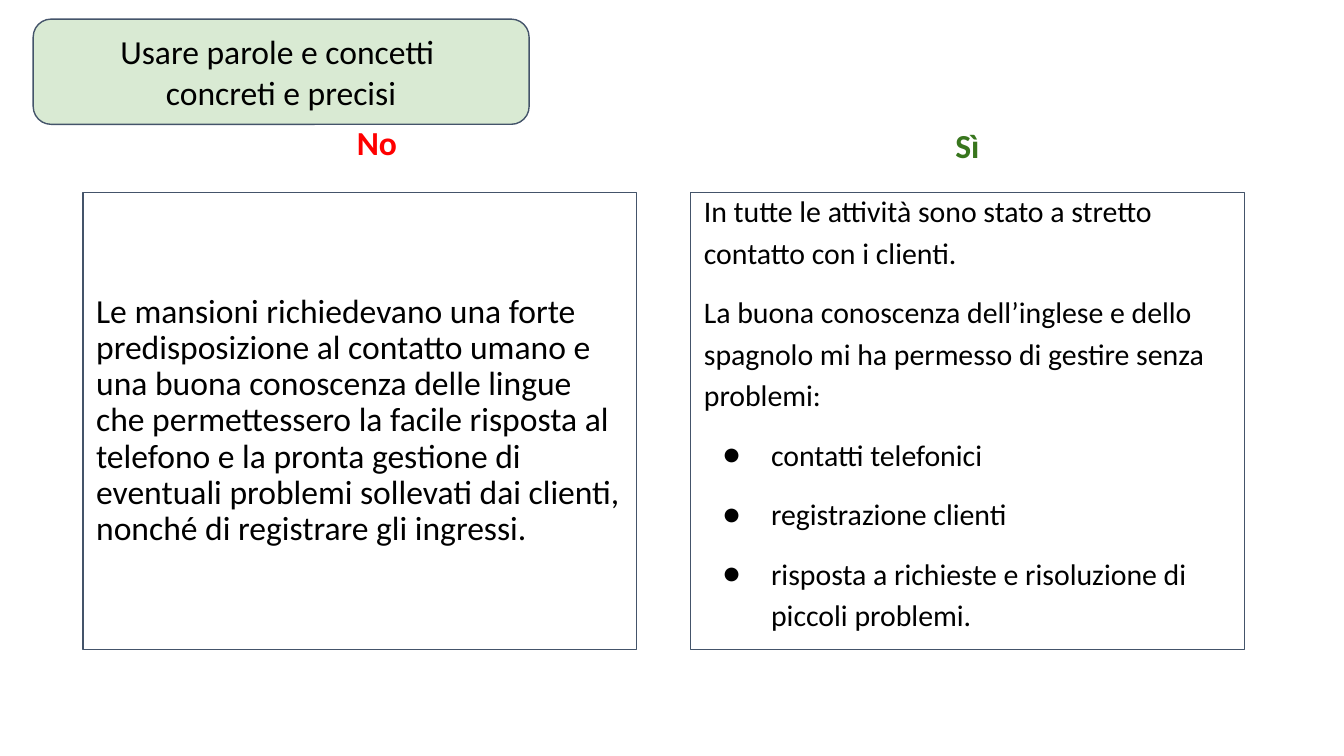
import pptx
import pptx.dml.color
import pptx.enum.shapes
import pptx.enum.text
import pptx.oxml
import pptx.oxml.ns
import pptx.util

RGBColor = pptx.dml.color.RGBColor
Align = pptx.enum.text.PP_ALIGN
Anchor = pptx.enum.text.MSO_ANCHOR
Shape = pptx.enum.shapes.MSO_SHAPE

BLACK = RGBColor(0x00, 0x00, 0x00)
RED = RGBColor(0xFF, 0x00, 0x00)
GREEN = RGBColor(0x38, 0x76, 0x1D)
PALE_GREEN = RGBColor(0xD9, 0xEA, 0xD3)
SLATE = RGBColor(0x44, 0x54, 0x6A)

FONT = "Calibri"
COLUMNS, ROWS = 100, 56.25
CELL = pptx.util.Inches(0.1)

PANEL_TOP, PANEL_WIDTH, PANEL_HEIGHT = 14.33, 41.2, 34
PANEL_LEFT, PANEL_STEP = 6.17, 45.22


def grid(box):
    return [round(length * CELL) for length in box]


def prepare_frame(shape, anchor, inset=0.1, top=None, bottom=None):
    frame = shape.text_frame
    frame.word_wrap = True
    frame.vertical_anchor = anchor
    frame.margin_left = frame.margin_right = pptx.util.Inches(inset)
    frame.margin_top = pptx.util.Inches(inset if top is None else top)
    frame.margin_bottom = pptx.util.Inches(inset if bottom is None else bottom)
    return frame


def add_bullet(paragraph, size):
    properties = paragraph._p.get_or_add_pPr()
    properties.set("marL", str(pptx.util.Inches(0.5)))
    properties.set("indent", str(pptx.util.Inches(-0.36)))
    namespace = pptx.oxml.ns.nsdecls("a")
    for markup in (
        f'<a:buClr {namespace}><a:srgbClr val="{BLACK}"/></a:buClr>',
        f'<a:buSzPts {namespace} val="{size * 100}"/>',
        f'<a:buFont {namespace} typeface="{FONT}"/>',
        f'<a:buChar {namespace} char="●"/>',
    ):
        properties.append(pptx.oxml.parse_xml(markup))


def write(frame, text, size=18, color=BLACK, bold=False, align=Align.LEFT,
          spacing=1.0, after=0, bullet=False):
    first = frame.paragraphs[0]
    paragraph = frame.add_paragraph() if first.runs else first
    paragraph.alignment = align
    paragraph.line_spacing = spacing
    paragraph.space_after = pptx.util.Pt(after)
    if bullet:
        add_bullet(paragraph, size)
    run = paragraph.add_run()
    run.text = text
    run.font.name = FONT
    run.font.size = pptx.util.Pt(size)
    run.font.bold = bold
    run.font.color.rgb = color


def add_outlined_shape(slide, kind, box, fill=None):
    shape = slide.shapes.add_shape(kind, *grid(box))
    shape.shadow.inherit = False
    shape.line.color.rgb = SLATE
    shape.line.width = pptx.util.Pt(0.75)
    if fill is None:
        shape.fill.background()
    else:
        shape.fill.solid()
        shape.fill.fore_color.rgb = fill
    return shape


def add_heading(slide, box, text, color, anchor):
    heading = slide.shapes.add_textbox(*grid(box))
    frame = prepare_frame(heading, anchor, inset=0.07)
    write(frame, text, color=color, bold=True, align=Align.CENTER, spacing=0.9)


def add_wrong_panel(slide, box):
    panel = add_outlined_shape(slide, Shape.RECTANGLE, box)
    frame = prepare_frame(panel, Anchor.MIDDLE)
    write(
        frame,
        "Le mansioni richiedevano una forte predisposizione al contatto umano e "
        "una buona conoscenza delle lingue che permettessero la facile risposta al "
        "telefono e la pronta gestione di eventuali problemi sollevati dai clienti, "
        "nonché di registrare gli ingressi. ",
        spacing=0.9,
    )


def add_right_panel(slide, box):
    panel = add_outlined_shape(slide, Shape.RECTANGLE, box)
    frame = prepare_frame(panel, Anchor.MIDDLE, top=0, bottom=0.16)
    for text, bullet in (
        ("In tutte le attività sono stato a stretto contatto con i clienti.", False),
        ("La buona conoscenza dell’inglese e dello spagnolo mi ha permesso di "
         "gestire senza problemi:", False),
        ("contatti telefonici", True),
        ("registrazione clienti", True),
        ("risposta a richieste e risoluzione di piccoli problemi.", True),
    ):
        write(frame, text, size=16, spacing=1.15, after=10, bullet=bullet)


def add_title(slide, box):
    title = add_outlined_shape(slide, Shape.ROUNDED_RECTANGLE, box, PALE_GREEN)
    title.adjustments[0] = 0.17
    frame = prepare_frame(title, Anchor.MIDDLE)
    for text in ("Usare parole e concetti ", "concreti e precisi"):
        write(frame, text, align=Align.CENTER)


def main():
    presentation = pptx.Presentation()
    presentation.slide_width, presentation.slide_height = grid((COLUMNS, ROWS))
    slide = presentation.slides.add_slide(presentation.slide_layouts[6])
    add_heading(slide, (6.9, 8.7, 42.3, 6.8), "No", RED, Anchor.TOP)
    add_heading(slide, (50.73, 7.6, 42.5, 6.8), "Sì", GREEN, Anchor.MIDDLE)
    for position, add_panel in enumerate((add_wrong_panel, add_right_panel)):
        left = PANEL_LEFT + position * PANEL_STEP
        add_panel(slide, (left, PANEL_TOP, PANEL_WIDTH, PANEL_HEIGHT))
    add_title(slide, (2.47, 1.42, 36.9, 7.83))
    presentation.save("out.pptx")


if __name__ == "__main__":
    main()
